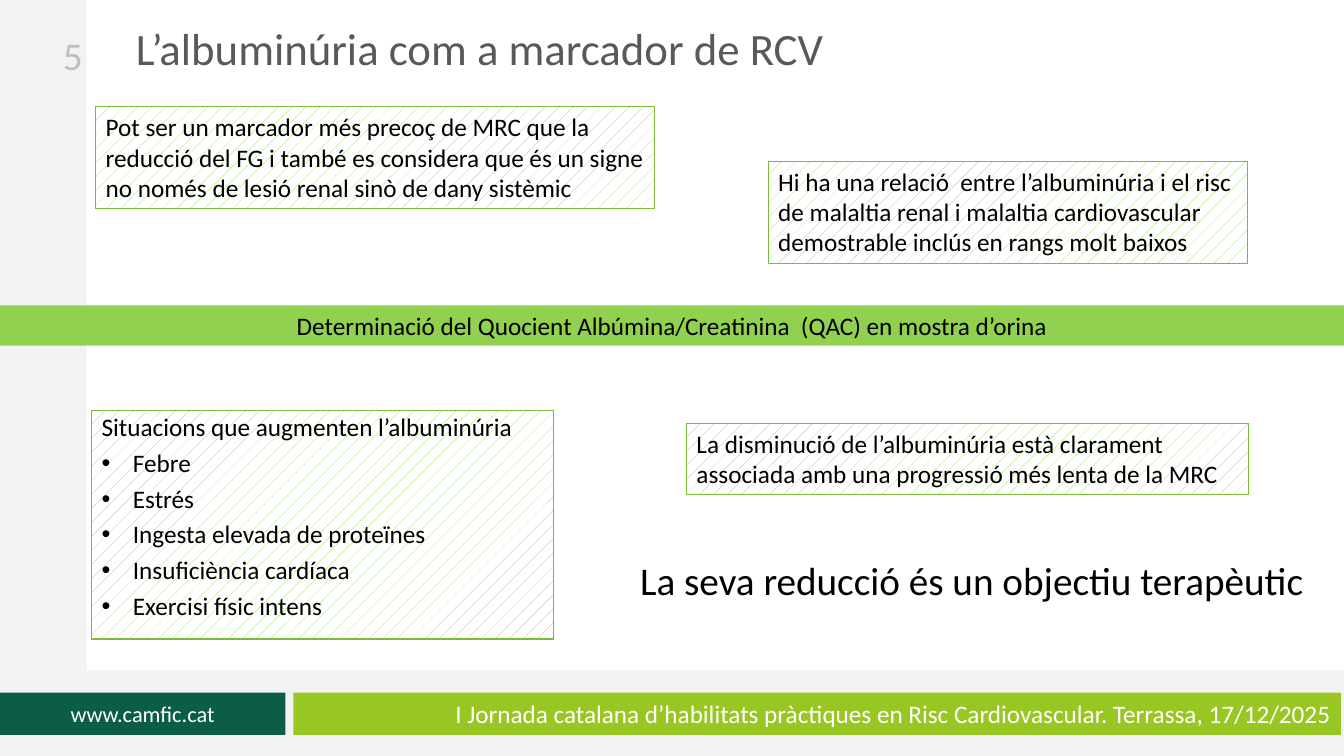
"""Builds the slide on albuminuria as a marker of cardiovascular risk."""
from lxml import etree
from pptx import Presentation
from pptx.dml.color import RGBColor
from pptx.enum.dml import MSO_PATTERN
from pptx.enum.shapes import MSO_SHAPE as Shape
from pptx.enum.text import MSO_ANCHOR as Anchor, PP_ALIGN as Align
from pptx.oxml.ns import qn
from pptx.util import Inches, Pt


def color(value):
    return RGBColor.from_string(value)


def write(box, text, size=18, ink="000000", align=Align.LEFT, anchor=Anchor.TOP,
          spacing=None, after=0, bullets=False):
    frame = box.text_frame
    frame.word_wrap = True
    frame.vertical_anchor = anchor
    for index, line in enumerate(text.split("\n")):
        para = frame.paragraphs[0] if index == 0 else frame.add_paragraph()
        para.alignment = align
        para.space_after = Pt(after)
        if spacing:
            para.line_spacing = spacing
        if bullets and index > 0:
            props = para._p.get_or_add_pPr()
            props.set("marL", str(Inches(0.31)))
            props.set("indent", str(-Inches(0.31)))
            etree.SubElement(props, qn("a:buFont")).set("typeface", "Arial")
            etree.SubElement(props, qn("a:buChar")).set("char", "•")
        span = para.add_run()
        span.text = line
        span.font.name = "Calibri"
        span.font.size = Pt(size)
        span.font.color.rgb = color(ink)


deck = Presentation()
deck.slide_width, deck.slide_height = Inches(13.33), Inches(7.5)
page = deck.slides.add_slide(deck.slide_layouts[6])

bands = [
    ((0, 0, 0.86, 7.5), "F2F2F2", "", {}),
    ((0, 6.65, 13.33, 0.85), "F2F2F2", "", {}),
    ((0, 6.87, 2.83, 0.42), "0B5D48", "www.camfic.cat",
     dict(size=16, ink="FFFFFF", align=Align.CENTER, anchor=Anchor.MIDDLE)),
    ((2.91, 6.87, 10.39, 0.42), "98C723",
     "I Jornada catalana d’habilitats pràctiques en Risc Cardiovascular. Terrassa, 17/12/2025",
     dict(ink="FFFFFF", align=Align.RIGHT, anchor=Anchor.MIDDLE)),
    ((0, 3.03, 13.33, 0.4), "92D050",
     "Determinació del Quocient Albúmina/Creatinina  (QAC) en mostra d’orina",
     dict(align=Align.CENTER)),
]
for place, fill, text, style in bands:
    band = page.shapes.add_shape(Shape.RECTANGLE, *map(Inches, place))
    band.shadow.inherit = False
    band.fill.solid()
    band.fill.fore_color.rgb = color(fill)
    band.line.fill.background()
    if text:
        write(band, text, **style)

labels = [
    ((1.25, 0.22, 9.92, 0.48), "L’albuminúria com a marcador de RCV",
     dict(size=32, ink="595959", spacing=0.9)),
    ((-0.08, 0.17, 1, 0.75), "5",
     dict(size=28, ink="BFBFBF", align=Align.RIGHT, anchor=Anchor.MIDDLE)),
    ((6.25, 5.47, 6.88, 0.57), "La seva reducció és un objectiu terapèutic", dict(size=28)),
]
for place, text, style in labels:
    write(page.shapes.add_textbox(*map(Inches, place)), text, **style)

notes = [
    ((0.95, 1.06, 5.54, 1.01),
     "Pot ser un marcador més precoç de MRC que la reducció del FG i també es considera "
     "que és un signe no només de lesió renal sinò de dany sistèmic", {}),
    ((6.81, 4.2, 5.57, 0.71),
     "La disminució de l’albuminúria està clarament associada amb una progressió "
     "més lenta de la MRC", {}),
    ((7.62, 1.6, 4.75, 1.01),
     "Hi ha una relació  entre l’albuminúria i el risc de malaltia renal i malaltia "
     "cardiovascular demostrable inclús en rangs molt baixos", {}),
    ((0.91, 4.07, 4.58, 2.27),
     "Situacions que augmenten l’albuminúria\nFebre\nEstrés\nIngesta elevada de proteïnes\n"
     "Insuficiència cardíaca\nExercisi físic intens",
     dict(spacing=0.9, after=6, bullets=True)),
]
for place, text, style in notes:
    note = page.shapes.add_shape(Shape.RECTANGLE, *map(Inches, place))
    note.shadow.inherit = False
    note.fill.patterned()
    note.fill.pattern = MSO_PATTERN.PERCENT_5
    note.fill.fore_color.rgb = color("92D050")
    note.fill.back_color.rgb = color("FFFFFF")
    note.line.color.rgb = color("7ABB3B")
    note.line.width = Pt(0.75)
    write(note, text, **style)

deck.save("out.pptx")
